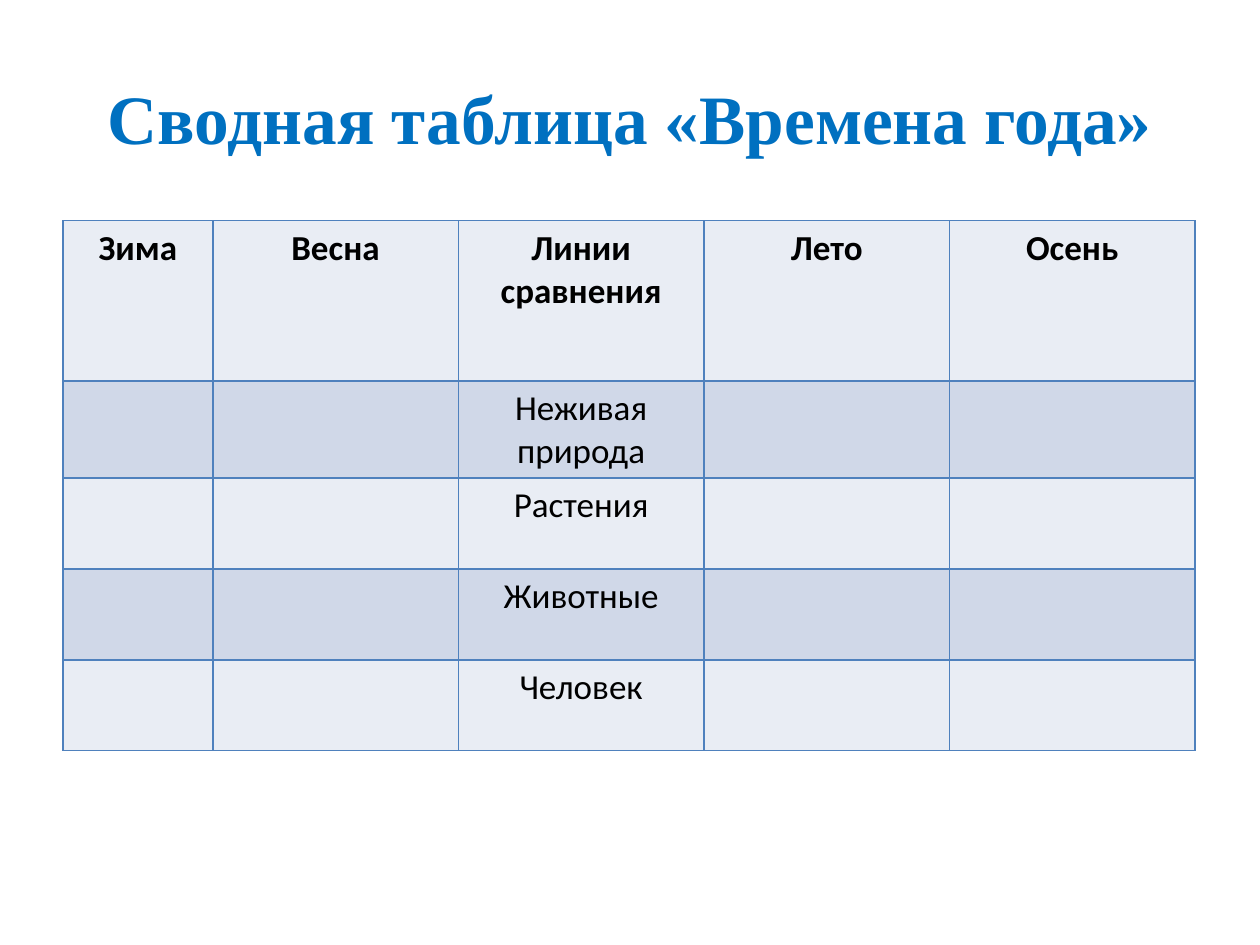
from lxml import etree
from pptx import Presentation, util as u
from pptx.dml.color import RGBColor
from pptx.enum import text
from pptx.oxml import ns


def style_text(frame, font_name, size, color, bold):
    paragraph = frame.paragraphs[0]
    paragraph.alignment = text.PP_ALIGN.CENTER
    for run in paragraph.runs:
        run.font.name = font_name
        run.font.size = u.Pt(size)
        run.font.bold = bold
        run.font.color.rgb = RGBColor.from_string(color)


def add_borders(cell, color, width):
    properties = cell._tc.get_or_add_tcPr()
    for side in ("a:lnL", "a:lnR", "a:lnT", "a:lnB"):
        line = etree.SubElement(properties, ns.qn(side), w=str(u.Pt(width)))
        fill = etree.SubElement(line, ns.qn("a:solidFill"))
        etree.SubElement(fill, ns.qn("a:srgbClr"), val=color)


seasons_header = ["Зима", "Весна", "Линии сравнения", "Лето", "Осень"]
comparison_lines = ["Неживая природа", "Растения", "Животные", "Человек"]
rows = [seasons_header] + [["", "", line, "", ""] for line in comparison_lines]
column_widths = [3.02] + [4.95] * 4
row_heights = [3.23, 1.96] + [1.83] * 3
band_colors = ["E9EDF4", "D0D8E8"]

presentation = Presentation()
presentation.slide_width = u.Cm(25.4)
presentation.slide_height = u.Cm(19.05)
slide = presentation.slides.add_slide(presentation.slide_layouts[6])

title = slide.shapes.add_textbox(u.Cm(1.27), u.Cm(0.76), u.Cm(22.86), u.Cm(3.18)).text_frame
title.word_wrap = True
title.vertical_anchor = text.MSO_ANCHOR.MIDDLE
title.text = "Сводная таблица «Времена года»"
style_text(title, "Times New Roman", 39.6, "0070C0", True)

seasons = slide.shapes.add_table(
    len(rows), len(column_widths), u.Cm(1.27), u.Cm(4.45),
    u.Cm(sum(column_widths)), u.Cm(sum(row_heights)),
).table
for column, width in zip(seasons.columns, column_widths):
    column.width = u.Cm(width)

for row_index, (labels, height) in enumerate(zip(rows, row_heights)):
    seasons.rows[row_index].height = u.Cm(height)
    for column_index, label in enumerate(labels):
        cell = seasons.cell(row_index, column_index)
        add_borders(cell, "4F81BD", 1)
        cell.fill.solid()
        cell.fill.fore_color.rgb = RGBColor.from_string(band_colors[row_index % 2])
        cell.text_frame.text = label
        style_text(cell.text_frame, "Calibri", 20, "000000", row_index == 0)

presentation.save("out.pptx")
